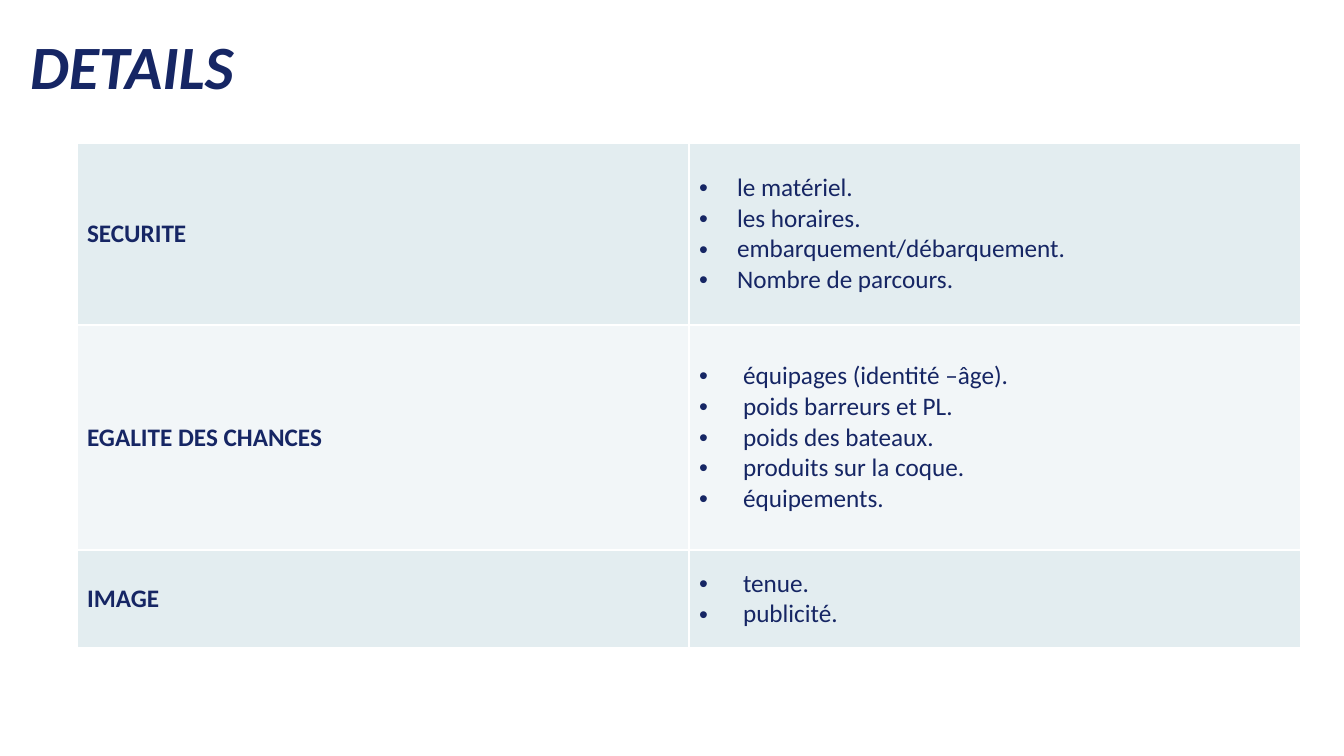
from lxml.etree import SubElement
from pptx import Presentation
from pptx.dml.color import RGBColor
from pptx.enum.text import MSO_ANCHOR, MSO_AUTO_SIZE, PP_ALIGN
from pptx.oxml.ns import qn
from pptx.util import Pt

TITLE = "DETAILS"
TOPICS = [
    ("SECURITE", 182, 38, ["le matériel.", "les horaires.",
                           "embarquement/débarquement.", "Nombre de parcours."]),
    ("EGALITE DES CHANCES", 225, 44, ["équipages (identité –âge).",
                                      "poids barreurs et PL.", "poids des bateaux.",
                                      "produits sur la coque.", "équipements."]),
    ("IMAGE", 98, 44, ["tenue.", "publicité."]),
]
NAVY = RGBColor(0x16, 0x26, 0x64)
WHITE = RGBColor(0xFF, 0xFF, 0xFF)
BANDS = [RGBColor(0xE3, 0xED, 0xF0), RGBColor(0xF2, 0xF6, 0xF8)]
FONT = "Calibri"
COLUMN_WIDTH = 612


def px(length):
    return round(length * 914400 / 100.8)


def style(font, size, bold, italic=False):
    font.name = FONT
    font.size = Pt(size)
    font.bold = bold
    font.italic = italic
    font.color.rgb = NAVY


def add_bullet(paragraph, indent):
    properties = paragraph._p.get_or_add_pPr()
    properties.set("marL", str(px(indent)))
    properties.set("indent", str(-px(indent)))
    SubElement(properties, qn("a:buFont"), typeface="Arial")
    SubElement(properties, qn("a:buChar"), char="•")


def fill_cell(cell, lines, band, bold, indent=0):
    cell.vertical_anchor = MSO_ANCHOR.MIDDLE
    cell_properties = cell._tc.get_or_add_tcPr()
    for side in ("lnL", "lnR", "lnT", "lnB"):
        border = SubElement(cell_properties, qn(f"a:{side}"), w=str(Pt(1)))
        paint = SubElement(border, qn("a:solidFill"))
        SubElement(paint, qn("a:srgbClr"), val=str(WHITE))
    cell.fill.solid()
    cell.fill.fore_color.rgb = band
    cell.text_frame.text = "\n".join(lines)
    for paragraph in cell.text_frame.paragraphs:
        if indent:
            add_bullet(paragraph, indent)
        for run in paragraph.runs:
            style(run.font, 18, bold)


def main():
    deck = Presentation()
    deck.slide_width, deck.slide_height = px(1344), px(756)
    slide = deck.slides.add_slide(deck.slide_layouts[5])

    title = slide.shapes.title
    title.left, title.top, title.width, title.height = 0, 0, px(950), px(140)
    title.text_frame.text = TITLE
    title.text_frame.auto_size = MSO_AUTO_SIZE.NONE
    title.text_frame.vertical_anchor = MSO_ANCHOR.MIDDLE
    heading = title.text_frame.paragraphs[0]
    heading.alignment = PP_ALIGN.LEFT
    heading.line_spacing = 0.9
    heading._p.get_or_add_pPr().set("indent", str(px(20)))
    style(heading.runs[0].font, 44, True, True)

    table_height = sum(height for _, height, _, _ in TOPICS)
    table = slide.shapes.add_table(len(TOPICS), 2, px(77), px(143),
                                   px(2 * COLUMN_WIDTH), px(table_height)).table
    for column in table.columns:
        column.width = px(COLUMN_WIDTH)
    for index, (topic, height, indent, checks) in enumerate(TOPICS):
        table.rows[index].height = px(height)
        band = BANDS[index % 2]
        fill_cell(table.cell(index, 0), [topic], band, True)
        fill_cell(table.cell(index, 1), checks, band, False, indent)

    deck.save("out.pptx")


if __name__ == "__main__":
    main()
